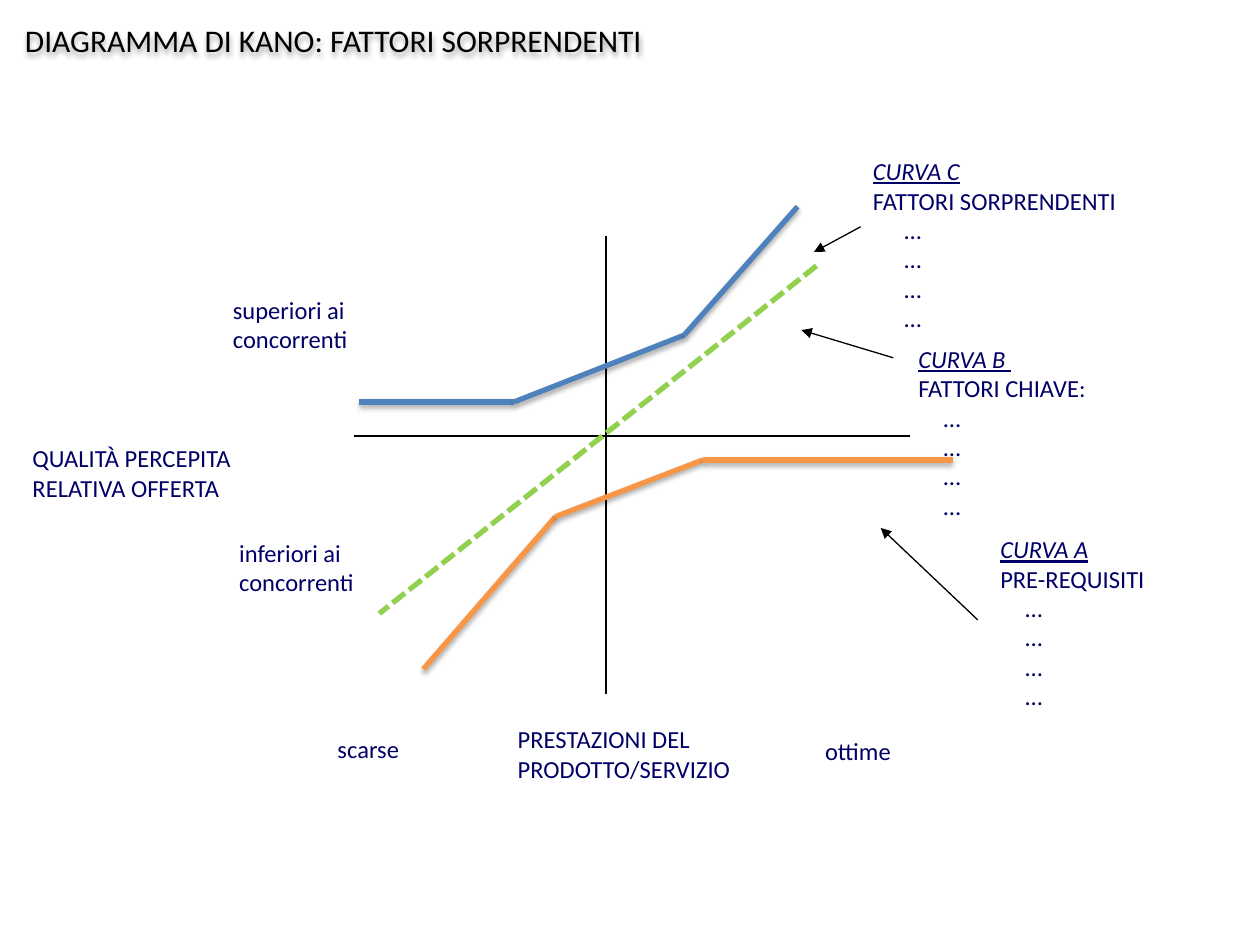
from lxml import etree
from pptx import Presentation
from pptx.dml.color import RGBColor
from pptx.enum.dml import MSO_LINE_DASH_STYLE as DASH
from pptx.enum.shapes import MSO_CONNECTOR
from pptx.enum.text import MSO_ANCHOR, PP_ALIGN
from pptx.oxml import parse_xml
from pptx.oxml.ns import nsdecls, qn
from pptx.util import Inches, Pt

COLORS = {"black": "000000", "navy": "000066", "blue": "4F81BD",
          "orange": "F79646", "green": "92D050"}
SHADOW = (f'<a:effectLst {nsdecls("a")}>'
          '<a:outerShdw blurRad="39370" dist="22860" dir="5400000" rotWithShape="0">'
          '<a:srgbClr val="000000"><a:alpha val="35000"/></a:srgbClr>'
          '</a:outerShdw></a:effectLst>')

deck = Presentation()
deck.slide_width, deck.slide_height = Inches(10), Inches(7.5)
page = deck.slides.add_slide(deck.slide_layouts[6])


def add_text(place, lines, color="navy", size=14):
    box = page.shapes.add_textbox(*map(Inches, place))
    frame = box.text_frame
    frame.word_wrap = True
    for index, line in enumerate(lines):
        para = frame.paragraphs[0] if index == 0 else frame.add_paragraph()
        para.text = line
        para.font.name = "Calibri"
        para.font.size = Pt(size)
        para.font.color.rgb = RGBColor.from_string(COLORS[color])
    return box


def add_line(start, end, color="black", width=0.75, shadow=False):
    line = page.shapes.add_connector(MSO_CONNECTOR.STRAIGHT, *map(Inches, start + end))
    line.line.color.rgb = RGBColor.from_string(COLORS[color])
    line.line.width = Pt(width)
    properties = line._element.spPr
    if shadow:
        properties.append(parse_xml(SHADOW))
    else:
        etree.SubElement(properties, qn("a:effectLst"))
    return line


# Axis labels
for place, lines in [
    ((0.16, 3.47, 2.36, 0.96), ["QUALITÀ PERCEPITA", "RELATIVA OFFERTA"]),
    ((1.75, 2.29, 1.53, 0.57), ["superiori ai concorrenti"]),
    ((1.8, 4.22, 1.53, 0.57), ["inferiori ai concorrenti"]),
    ((4.01, 5.7, 2.18, 0.49), ["PRESTAZIONI DEL PRODOTTO/SERVIZIO"]),
    ((6.45, 5.79, 0.97, 0.31), ["ottime"]),
    ((2.58, 5.78, 1.21, 0.33), ["scarse"]),
]:
    add_text(place, lines)

# Curve notes: underlined heading, then a hanging list of dots
for place, heading, factors, indent in [
    ((6.83, 1.19, 2.43, 2.13), "CURVA C", "FATTORI SORPRENDENTI", 0.25),
    ((7.19, 2.68, 2.38, 1.97), "CURVA B ", "FATTORI CHIAVE:", 0.2),
    ((7.84, 4.19, 1.88, 2.02), "CURVA A", "PRE-REQUISITI", 0.2),
]:
    box = add_text(place, [heading, factors + "\v…" * 4])
    for para in box.text_frame.paragraphs:
        hanging = para._p.get_or_add_pPr()
        hanging.set("marL", str(Inches(indent)))
        hanging.set("indent", str(-Inches(indent)))
    title_para = box.text_frame.paragraphs[0]
    title_para.alignment = PP_ALIGN.JUSTIFY
    title_para.font.italic = True
    title_para.font.underline = True

# Axes
add_line((4.81, 1.87), (4.81, 5.51))
add_line((2.81, 3.46), (7.22, 3.46))

# Arrows from the notes to the curves
for start, end in [((7.09, 2.84), (6.36, 2.62)),
                   ((6.83, 1.8), (6.46, 2)),
                   ((7.76, 4.92), (6.99, 4.19))]:
    arrow = add_line(start, end)
    etree.SubElement(arrow.line._get_or_add_ln(), qn("a:tailEnd"), type="triangle")

# Key factors: dashed diagonal
diagonal = add_line((6.48, 2.11), (3.01, 4.87), "green", 3)
diagonal.line.dash_style = DASH.SQUARE_DOT

# Surprising factors (blue) and prerequisites (orange)
for color, points in [
    ("blue", [(2.85, 3.19), (4.08, 3.19), (5.43, 2.66), (6.33, 1.64)]),
    ("orange", [(3.36, 5.31), (4.41, 4.1), (5.58, 3.65), (7.56, 3.65)]),
]:
    for start, end in zip(points, points[1:]):
        add_line(start, end, color, 3, shadow=True)

# Title
title = add_text((0.1, 0.12, 7.66, 0.4),
                 ["DIAGRAMMA DI KANO: FATTORI SORPRENDENTI"], "black", 18)
title.text_frame.vertical_anchor = MSO_ANCHOR.MIDDLE
title._element.spPr.append(parse_xml(SHADOW))

deck.save("out.pptx")
